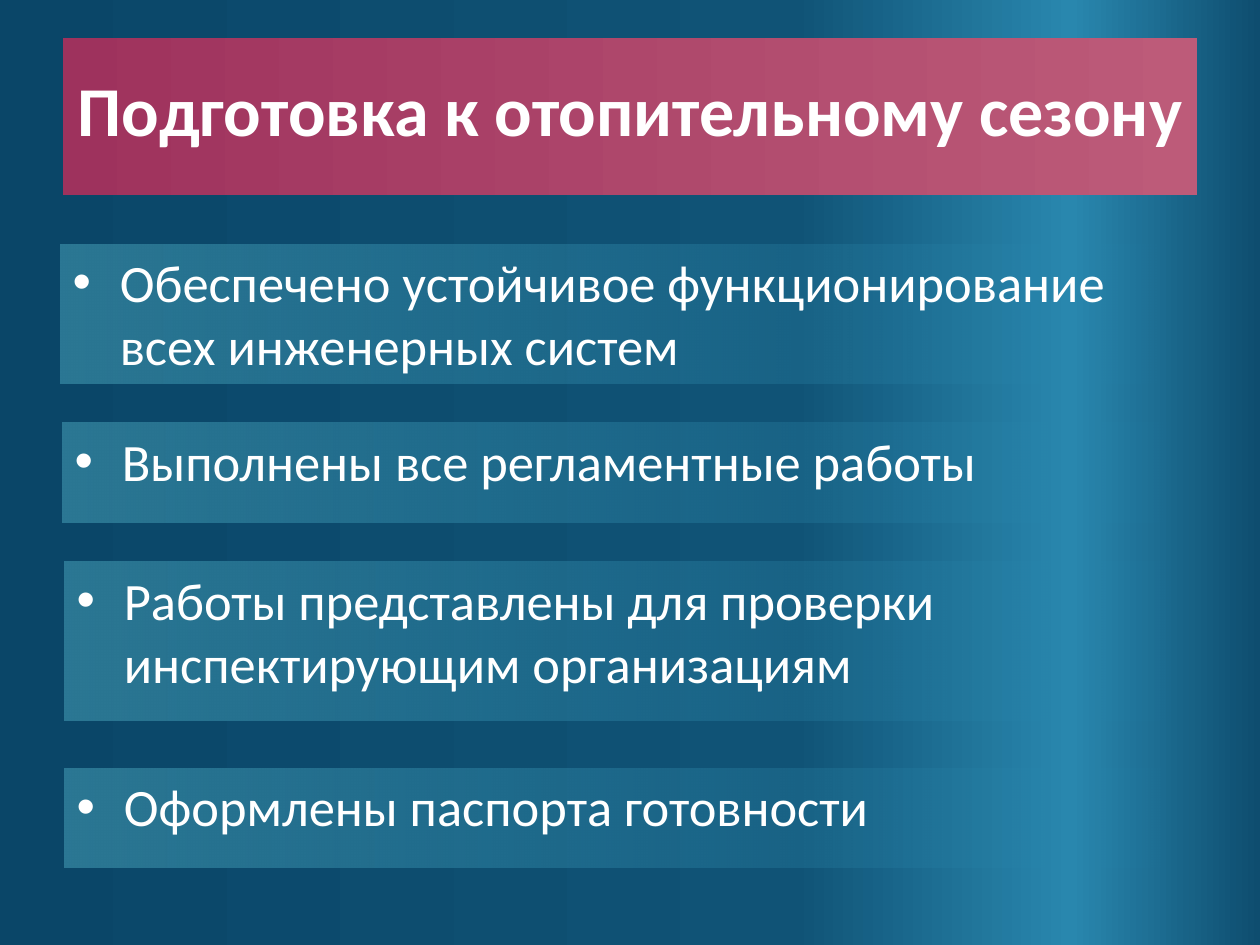
from typing import NamedTuple

from lxml import etree
from pptx import Presentation
from pptx import util as u
from pptx.dml.color import RGBColor
from pptx.enum import shapes, text
from pptx.oxml import ns

COLORS = {
    "deep": "0A4668", "navy": "105376", "glow": "2987AE", "edge": "0E4D6F",
    "crimson": "9E325D", "rose": "BD5B79",
    "teal": "33839E", "sky": "2C8DB4", "white": "FFFFFF",
}
FONT = "Calibri"
BULLET_INDENT = u.Pt(27)


class Stop(NamedTuple):
    percent: int
    color: str
    opacity: int = 100


class Band(NamedTuple):
    left: float
    top: float
    width: float
    height: float
    wording: str


BACKDROP = [Stop(0, "deep"), Stop(63, "navy"), Stop(85, "glow"), Stop(100, "edge")]
TITLE_FILL = [Stop(0, "crimson"), Stop(100, "rose")]
POINT_FILL = [Stop(0, "teal", 82), Stop(100, "sky", 0)]

TITLE = Band(36, 21.6, 648, 90, "Подготовка к отопительному сезону")
POINTS = [
    Band(34.4, 139.5, 649.5, 79.5,
         "Обеспечено устойчивое функционирование всех инженерных систем"),
    Band(35.6, 241.6, 652.3, 57, "Выполнены все регламентные работы"),
    Band(36.7, 320.9, 652.3, 91,
         "Работы представлены для проверки инспектирующим организациям"),
    Band(36.7, 439, 649.5, 57, "Оформлены паспорта готовности"),
]


def add_node(parent, tag: str, **attributes: str):
    return etree.SubElement(parent, ns.qn(tag), **attributes)


def fill_gradient(owner, fill, stops: list[Stop]) -> None:
    """Fill a shape or background from left to right, with any number of stops."""
    fill.solid()
    solid = owner._element.find(".//" + ns.qn("a:solidFill"))
    gradient = etree.Element(ns.qn("a:gradFill"), rotWithShape="1")
    stop_list = add_node(gradient, "a:gsLst")
    for stop in stops:
        node = add_node(stop_list, "a:gs", pos=str(stop.percent * 1000))
        color = add_node(node, "a:srgbClr", val=COLORS[stop.color])
        if stop.opacity < 100:
            add_node(color, "a:alpha", val=str(stop.opacity * 1000))
    add_node(gradient, "a:lin", ang="0", scaled="0")
    solid.getparent().replace(solid, gradient)


def add_band(slide, band: Band, stops: list[Stop], size: int, bold: bool, anchor, align):
    """Draw a filled band and return its only paragraph."""
    panel = slide.shapes.add_shape(
        shapes.MSO_SHAPE.RECTANGLE, *(u.Pt(length) for length in band[:4]))
    panel.shadow.inherit = False
    panel.line.fill.background()
    fill_gradient(panel, panel.fill, stops)
    frame = panel.text_frame
    frame.word_wrap = True
    frame.vertical_anchor = anchor
    frame.text = band.wording
    paragraph = frame.paragraphs[0]
    paragraph.alignment = align
    font = paragraph.runs[0].font
    font.name, font.size, font.bold = FONT, u.Pt(size), bold
    font.color.rgb = RGBColor.from_string(COLORS["white"])
    return paragraph


def add_bullet(paragraph) -> None:
    paragraph.space_before = u.Pt(2)
    properties = paragraph._p.get_or_add_pPr()
    properties.set("marL", str(BULLET_INDENT))
    properties.set("indent", str(-BULLET_INDENT))
    add_node(properties, "a:buFont", typeface="Arial")
    add_node(properties, "a:buChar", char="•")


def main() -> None:
    deck = Presentation()
    deck.slide_width, deck.slide_height = u.Pt(720), u.Pt(540)
    slide = deck.slides.add_slide(deck.slide_layouts[6])
    fill_gradient(slide, slide.background.fill, BACKDROP)

    heading = add_band(slide, TITLE, TITLE_FILL, 40, True,
                       text.MSO_ANCHOR.MIDDLE, text.PP_ALIGN.CENTER)
    heading.line_spacing = 0.8
    for point in POINTS:
        add_bullet(add_band(slide, point, POINT_FILL, 30, False,
                            text.MSO_ANCHOR.TOP, text.PP_ALIGN.LEFT))
    deck.save("out.pptx")


if __name__ == "__main__":
    main()
